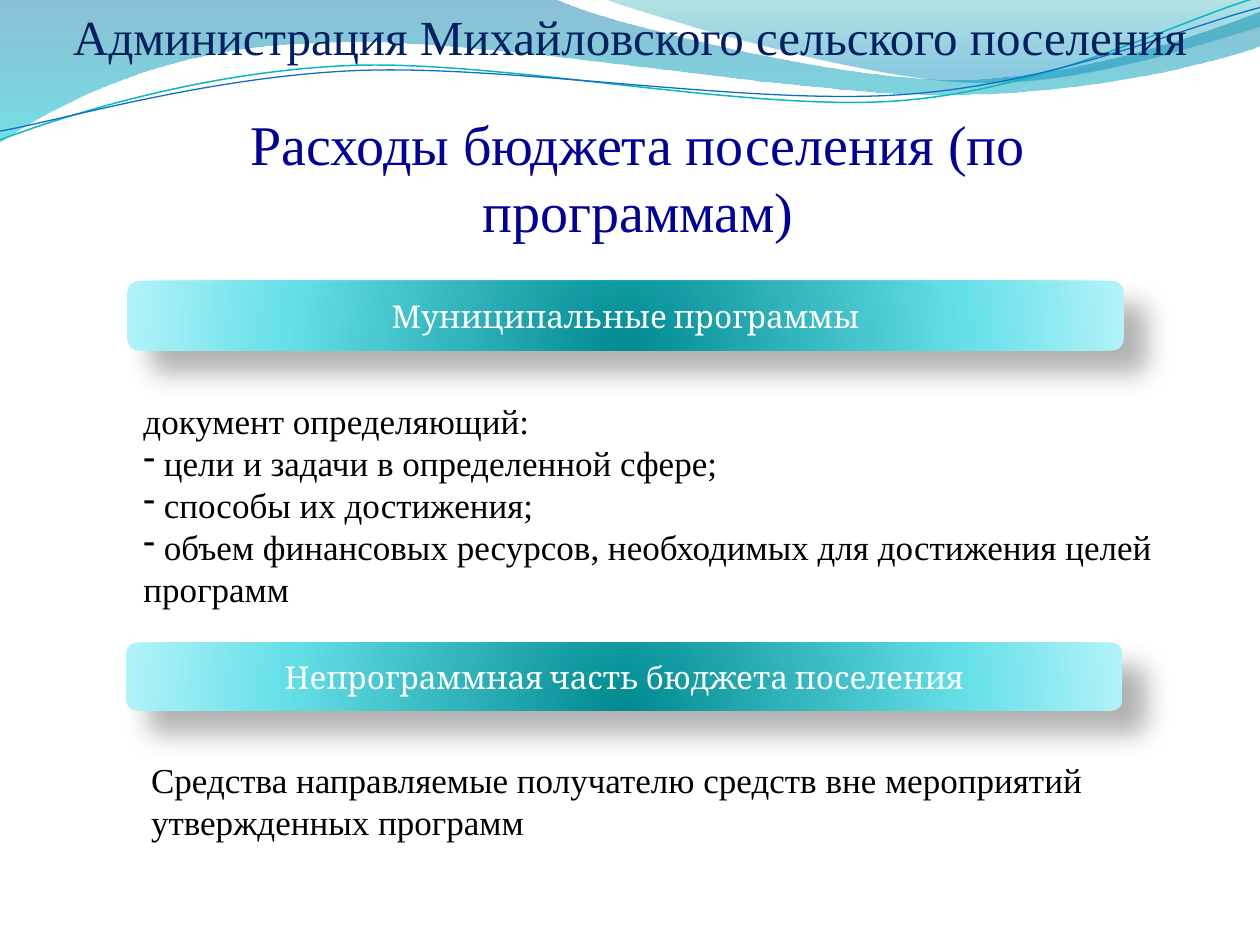
"""Build the slide on programme and non-programme spending of a settlement budget."""
import math

from lxml import etree
from pptx import Presentation
from pptx import util as u
from pptx.dml.color import RGBColor
from pptx.enum import shapes, text
from pptx.oxml.ns import qn

PX = 9144
TILT = 357.3
SERIF = "Times New Roman"
CENTER, LEFT = text.PP_ALIGN.CENTER, text.PP_ALIGN.LEFT

# Each wave: start point, then segments of one point (line) or three points (curve)
BANDS = [
    ((0, 0), [
        [(440, -1)],
        [(476, 17), (664, 63), (758, 63)],
        [(853, 63), (958, 26), (1000, 9)],
        [(1001, 36)],
        [(983, 44), (870, 76), (746, 75)],
        [(622, 75), (382, 28), (257, 34)],
        [(129, 36), (46, 83), (-1, 113)],
        [(0, 0)],
    ], [(0, "0074A1", 45), (100, "00C6CF", 55)]),
    ((479, -1), [
        [(509, 11), (682, 62), (769, 65)],
        [(856, 69), (961, 32), (1000, 21)],
        [(1000, 0)],
        [(479, -1)],
    ], [(0, "00A1A9", 30), (80, "008BBF", 45)]),
]
STRANDS = [
    ((0, 111), [
        [(48, 93), (158, 57), (277, 52)],
        [(395, 47), (593, 89), (713, 80)],
        [(833, 71), (938, 15), (998, -2)],
    ], (499, 57.5), "0AB8BF", 0.85),
    ((0, 104), [
        [(47, 96), (164, 61), (283, 56)],
        [(403, 51), (597, 84), (717, 75)],
        [(836, 67), (941, 21), (1000, 6)],
    ], (499.5, 59), "0F6FC6", 0.75),
]
TEXTS = [
    ((0, 0, 1000, 57), 28, "002060", CENTER,
     ["Администрация Михайловского сельского поселения"], []),
    ((69, 82, 875, 118), 32, "000099", CENTER,
     ["Расходы бюджета поселения (по программам)"], []),
    ((104, 312, 868, 178), 20, "000000", LEFT, ["документ определяющий:"],
     [" цели и задачи в определенной сфере;", " способы их достижения;",
      " объем финансовых ресурсов, необходимых для достижения целей программ"]),
    ((110, 597, 852, 77), 20, "000000", LEFT,
     ["Средства направляемые получателю средств вне мероприятий утвержденных программ"], []),
]
BANNERS = [
    ((101, 223, 791, 55), "Муниципальные программы"),
    ((100, 510, 791, 54), "Непрограммная часть бюджета поселения"),
]
BANNER_STOPS = [(0, "008A91", 100), (68, "64DFE7", 100), (100, "B1F3F9", 100)]


def rgb(value):
    return RGBColor.from_string(value)


def add(parent, tag, **attrs):
    return etree.SubElement(parent, qn(f"a:{tag}"), {k: str(v) for k, v in attrs.items()})


def add_color(parent, value, opacity):
    color = add(parent, "srgbClr", val=value)
    if opacity < 100:
        add(color, "alpha", val=opacity * 1000)


def gradient(sp, stops, radial=False):
    sp.fill.background()
    old = sp._element.spPr.find(qn("a:noFill"))
    grad = etree.Element(qn("a:gradFill"), rotWithShape="1")
    stop_list = add(grad, "gsLst")
    for pos, value, opacity in stops:
        add_color(add(stop_list, "gs", pos=pos * 1000), value, opacity)
    if radial:
        add(add(grad, "path", path="circle"), "fillToRect",
            l=50000, t=130000, r=50000, b=-30000)
    else:
        add(grad, "lin", ang=90 * 60000, scaled=1)
    old.getparent().replace(old, grad)


def turn(point, center, degrees):
    cos, sin = math.cos(math.radians(degrees)), math.sin(math.radians(degrees))
    dx, dy = point[0] - center[0], point[1] - center[1]
    return center[0] + dx * cos - dy * sin, center[1] + dx * sin + dy * cos


def add_wave(slide, start, segments, close):
    points = [(x * PX, y * PX) for seg in segments for x, y in seg]
    builder = slide.shapes.build_freeform(start[0] * PX, start[1] * PX, scale=1.0)
    builder.add_line_segments(points, close=close)
    sp = builder.convert_to_shape()
    sp.shadow.inherit = False
    lines = iter(list(sp._element.iter(qn("a:lnTo"))))
    for seg in segments:
        first, *rest = [next(lines) for _ in seg]
        if rest:
            curve = etree.Element(qn("a:cubicBezTo"))
            first.addprevious(curve)
            for line in (first, *rest):
                curve.append(line[0])
                line.getparent().remove(line)
    return sp


def write(p, content, size, color, align, font=SERIF):
    p.alignment = align
    r = p.add_run()
    r.text = content
    r.font.size, r.font.name = u.Pt(size), font
    r.font.color.rgb = rgb(color)


def add_text(slide, box, size, color, align, plain, bulleted):
    tf = slide.shapes.add_textbox(*(v * PX for v in box)).text_frame
    tf.word_wrap = True
    tf.auto_size = text.MSO_AUTO_SIZE.SHAPE_TO_FIT_TEXT
    for i, content in enumerate(plain + bulleted):
        p = tf.add_paragraph() if i else tf.paragraphs[0]
        if i >= len(plain):
            props = p._p.get_or_add_pPr()
            add(props, "buFontTx")
            add(props, "buChar", char="-")
        write(p, content, size, color, align)


def add_banner(slide, box, content):
    sp = slide.shapes.add_shape(shapes.MSO_SHAPE.ROUNDED_RECTANGLE, *(v * PX for v in box))
    sp.line.fill.background()
    gradient(sp, BANNER_STOPS, radial=True)
    sp.shadow.inherit = False
    shadow = add(sp._element.spPr.find(qn("a:effectLst")), "outerShdw", blurRad=u.Pt(15),
                 dist=u.Pt(18), dir=45 * 60000, algn="tl", rotWithShape=0)
    add_color(shadow, "000000", 30)
    tf = sp.text_frame
    tf.word_wrap = True
    tf.vertical_anchor = text.MSO_ANCHOR.MIDDLE
    write(tf.paragraphs[0], content, 18, "FFFFFF", CENTER, "Cambria")


def main():
    prs = Presentation()
    prs.slide_width, prs.slide_height = 1000 * PX, 750 * PX
    slide = prs.slides.add_slide(prs.slide_layouts[6])
    for start, segments, stops in BANDS:
        sp = add_wave(slide, start, segments, True)
        sp.line.fill.background()
        gradient(sp, stops)
    for start, segments, center, color, width in STRANDS:
        level = [[turn(pt, center, -TILT) for pt in seg] for seg in segments]
        sp = add_wave(slide, turn(start, center, -TILT), level, False)
        sp.rotation = TILT
        sp.fill.background()
        sp.line.color.rgb = rgb(color)
        sp.line.width = u.Pt(width)
    add_text(slide, *TEXTS[0])
    add_text(slide, *TEXTS[1])
    for banner, body in zip(BANNERS, TEXTS[2:]):
        add_banner(slide, *banner)
        add_text(slide, *body)
    prs.save("out.pptx")


if __name__ == "__main__":
    main()
